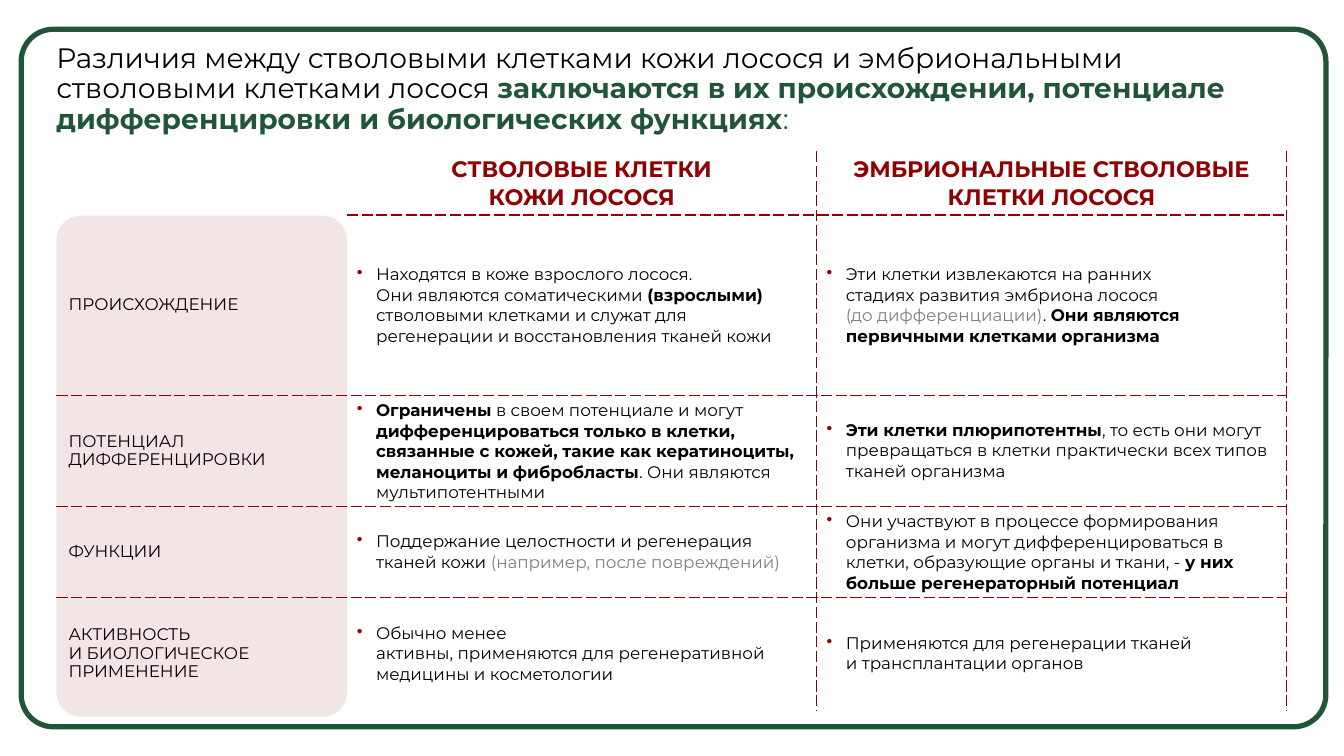
"""Build the slide comparing salmon skin stem cells with embryonic stem cells."""
from dataclasses import dataclass

from lxml import etree
from pptx import Presentation
from pptx import util as u
from pptx.dml.color import RGBColor
from pptx.enum import shapes, text
from pptx.oxml.ns import qn

BLACK = RGBColor(0x00, 0x00, 0x00)
GRAY = RGBColor(0x80, 0x80, 0x80)
RED = RGBColor(0x90, 0x00, 0x00)
GREEN = RGBColor(0x21, 0x55, 0x3A)
FONT = "Montserrat"
COLUMN_WIDTHS = (2.88, 4.66, 4.66)
ROW_HEIGHTS = (0.52, 1.79, 1.1, 0.9, 1.12)
BORDER_TAGS = {"left": "a:lnL", "right": "a:lnR", "top": "a:lnT", "bottom": "a:lnB"}


@dataclass(frozen=True)
class Span:
    """A stretch of text with one look."""
    words: str
    bold: bool = False
    color: RGBColor = BLACK


@dataclass(frozen=True)
class Panel:
    """A rounded rectangle on the slide."""
    left: float
    top: float
    width: float
    height: float
    corner: float
    rotation: float = 0


LABEL_PANEL = Panel(0.56, 2.14, 2.88, 4.97, 0.083)
FRAME = Panel(3.22, -2.72, 6.92, 12.94, 0.046, 90)

TITLE = (
    Span("Различия между стволовыми клетками кожи лосося и эмбриональными "
         "стволовыми клетками лосося "),
    Span("заключаются в их происхождении, потенциале дифференцировки "
         "и биологических функциях", True, GREEN),
    Span(":", False, GREEN),
)

ROWS = (
    (
        (),
        (Span("СТВОЛОВЫЕ КЛЕТКИ\nКОЖИ ЛОСОСЯ", True, RED),),
        (Span("ЭМБРИОНАЛЬНЫЕ СТВОЛОВЫЕ КЛЕТКИ ЛОСОСЯ", True, RED),),
    ),
    (
        (Span("ПРОИСХОЖДЕНИЕ"),),
        (Span("Находятся в коже взрослого лосося.\nОни являются соматическими "),
         Span("(взрослыми) ", True),
         Span("стволовыми клетками и служат для регенерации "
              "и восстановления тканей кожи")),
        (Span("Эти клетки извлекаются на ранних\nстадиях развития эмбриона лосося\n"),
         Span("(до дифференциации)", False, GRAY),
         Span(". "),
         Span("Они являются первичными клетками организма", True)),
    ),
    (
        (Span("ПОТЕНЦИАЛ\nДИФФЕРЕНЦИРОВКИ"),),
        (Span("Ограничены", True),
         Span(" в своем потенциале и могут "),
         Span("дифференцироваться только в клетки, связанные с кожей, "
              "такие как кератиноциты, меланоциты и фибробласты", True),
         Span(". Они являются мультипотентными")),
        (Span("Эти клетки плюрипотентны", True),
         Span(", то есть они могут превращаться в клетки практически "
              "всех типов тканей организма")),
    ),
    (
        (Span("ФУНКЦИИ"),),
        (Span("Поддержание целостности и регенерация тканей кожи "),
         Span("(например, после повреждений)", False, GRAY)),
        (Span("Они участвуют в процессе формирования организма и могут "
              "дифференцироваться в клетки, образующие органы и ткани, - "),
         Span("у них больше регенераторный потенциал", True)),
    ),
    (
        (Span("АКТИВНОСТЬ\nИ БИОЛОГИЧЕСКОЕ ПРИМЕНЕНИЕ"),),
        (Span("Обычно менее\nактивны, применяются для регенеративной "
              "медицины и косметологии"),),
        (Span("Применяются для регенерации тканей\nи трансплантации органов"),),
    ),
)


def assign(target, values: dict) -> None:
    """Set every named attribute on the target."""
    for name, value in values.items():
        setattr(target, name, value)


def write_spans(para, spans: tuple[Span, ...], size: float) -> None:
    """Write the spans into a paragraph, turning newlines into line breaks."""
    for span in spans:
        for index, words in enumerate(span.words.split("\n")):
            if index:
                para.add_line_break()
            if words:
                run = para.add_run()
                run.text = words
                assign(run.font, {"name": FONT, "size": u.Pt(size), "bold": span.bold})
                run.font.color.rgb = span.color


def add_bullet(para) -> None:
    """Give the paragraph a hanging red bullet."""
    properties = para._p.get_or_add_pPr()
    properties.set("marL", str(u.Inches(0.19)))
    properties.set("indent", str(u.Inches(-0.19)))
    color = etree.SubElement(properties, qn("a:buClr"))
    etree.SubElement(color, qn("a:srgbClr"), val=str(RED))
    etree.SubElement(properties, qn("a:buChar"), char="•")


def add_borders(cell, drawn: dict[str, bool]) -> None:
    """Draw a dashed red line on the chosen sides and clear the others."""
    properties = cell._tc.get_or_add_tcPr()
    for side, tag in BORDER_TAGS.items():
        line = etree.SubElement(properties, qn(tag), w=str(u.Pt(1)))
        if drawn[side]:
            fill = etree.SubElement(line, qn("a:solidFill"))
            etree.SubElement(fill, qn("a:srgbClr"), val=str(RED))
            etree.SubElement(line, qn("a:prstDash"), val="sysDash")
        else:
            etree.SubElement(line, qn("a:noFill"))


def add_panel(page, panel: Panel):
    """Add a rounded rectangle without a shadow."""
    lengths = (panel.left, panel.top, panel.width, panel.height)
    box = page.shapes.add_shape(
        shapes.MSO_SHAPE.ROUNDED_RECTANGLE, *map(u.Inches, lengths))
    box.adjustments[0] = panel.corner
    box.rotation = panel.rotation
    box.shadow.inherit = False
    return box


def add_label_panel(page) -> None:
    """Add the pale red panel behind the row labels."""
    box = add_panel(page, LABEL_PANEL)
    box.fill.solid()
    box.fill.fore_color.rgb = RED
    box.line.fill.background()
    color = box._element.spPr.find(".//" + qn("a:srgbClr"))
    etree.SubElement(color, qn("a:alpha"), val="10000")


def add_comparison(page) -> None:
    """Add the comparison table."""
    table = page.shapes.add_table(
        len(ROW_HEIGHTS), len(COLUMN_WIDTHS), u.Inches(0.56), u.Inches(1.5),
        u.Inches(sum(COLUMN_WIDTHS)), u.Inches(sum(ROW_HEIGHTS))).table
    assign(table, {"first_row": False, "horz_banding": False})
    for column, width in zip(table.columns, COLUMN_WIDTHS):
        column.width = u.Inches(width)
    for row, height in zip(table.rows, ROW_HEIGHTS):
        row.height = u.Inches(height)
    for r, row_spans in enumerate(ROWS):
        for c, spans in enumerate(row_spans):
            cell = table.cell(r, c)
            cell.vertical_anchor = text.MSO_ANCHOR.MIDDLE
            add_borders(cell, {
                "left": c == 2,
                "right": c > 0,
                "top": r > 1 or (r == 1 and c > 0),
                "bottom": r < len(ROWS) - 1 and (r > 0 or c > 0),
            })
            cell.fill.background()
            para = cell.text_frame.paragraphs[0]
            if c == 0:
                cell.margin_left = u.Inches(0.12)
                para.line_spacing = 0.9
            elif r == 0:
                para.alignment = text.PP_ALIGN.CENTER
            else:
                add_bullet(para)
            write_spans(para, spans, 12 if r else 16)


def add_title(page) -> None:
    """Place and fill the title."""
    title = page.shapes.title
    assign(title, {"left": u.Inches(0.46), "top": u.Inches(0.39),
                   "width": u.Inches(12.16), "height": u.Inches(1.01)})
    assign(title.text_frame, {"word_wrap": True, "vertical_anchor": text.MSO_ANCHOR.TOP,
                              "auto_size": text.MSO_AUTO_SIZE.SHAPE_TO_FIT_TEXT})
    para = title.text_frame.paragraphs[0]
    assign(para, {"alignment": text.PP_ALIGN.LEFT, "line_spacing": 0.9})
    write_spans(para, TITLE, 20)


def main() -> None:
    """Build and save the deck."""
    deck = Presentation()
    assign(deck, {"slide_width": u.Inches(13.33), "slide_height": u.Inches(7.5)})
    page = deck.slides.add_slide(deck.slide_layouts[5])
    add_label_panel(page)
    add_comparison(page)
    add_title(page)
    frame = add_panel(page, FRAME)
    frame.fill.background()
    frame.line.color.rgb = GREEN
    frame.line.width = u.Pt(3.75)
    deck.save("out.pptx")


if __name__ == "__main__":
    main()
